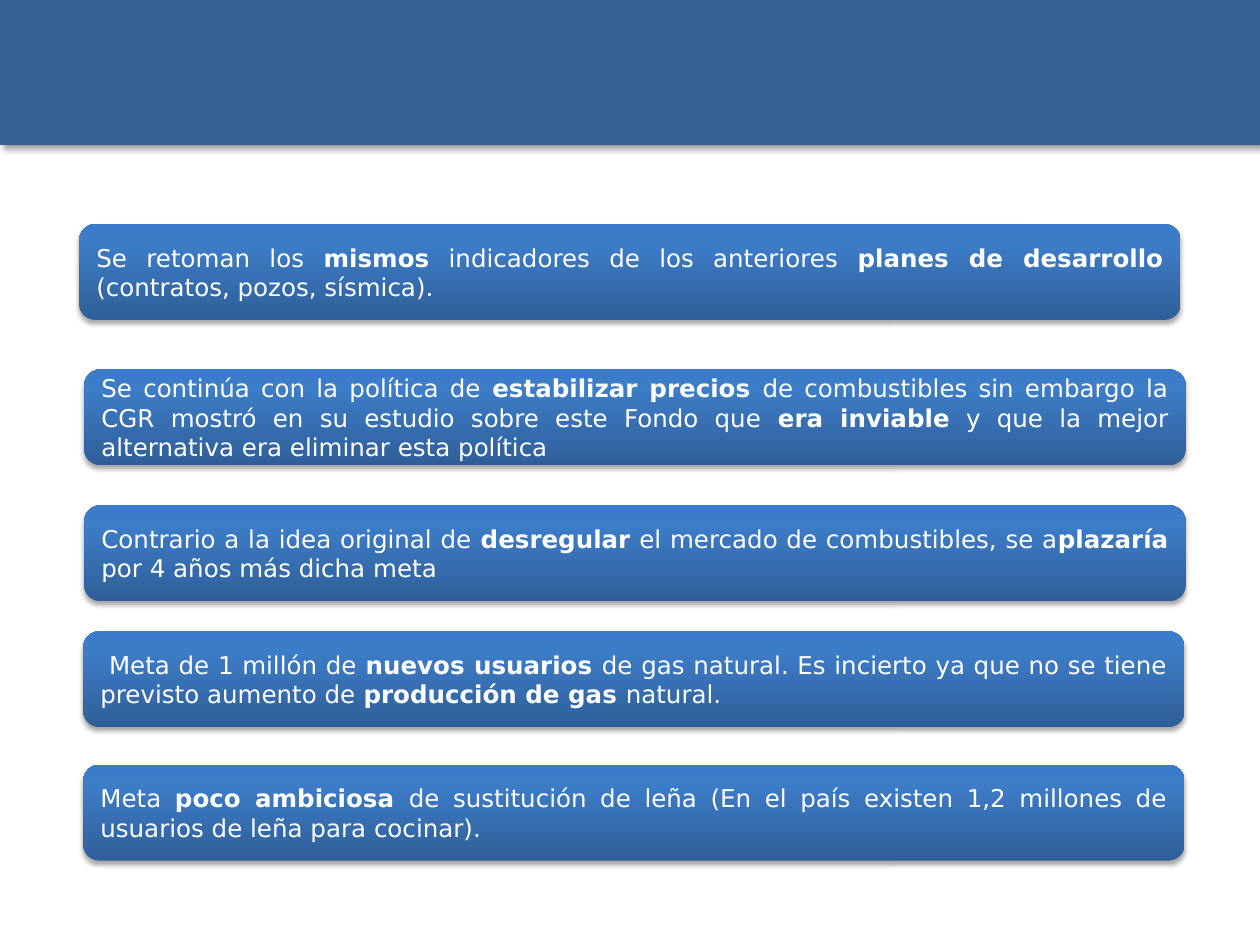
from lxml.etree import SubElement
from pptx import Presentation
from pptx.dml.color import RGBColor
from pptx.enum.shapes import MSO_SHAPE
from pptx.enum.text import MSO_ANCHOR, PP_ALIGN
from pptx.oxml.ns import qn
from pptx.util import Cm, Pt

THEME = {
    "header": "376092",
    "card_stops": [(0, "2F5F99"), (80, "3D7CC7"), (100, "3A7CCB")],
    "header_shadow": {"color": "000000", "opacity": 40, "blur": 4, "distance": 3, "angle": 45},
    "card_shadow": {"color": "000000", "opacity": 35, "blur": 3.1, "distance": 1.8, "angle": 90},
    "font": {"name": "DejaVu Sans", "size": Pt(14)},
    "text": "FFFFFF",
}

SLIDE_WIDTH, SLIDE_HEIGHT = 25.4, 19.05
HEADER_HEIGHT = 2.92
CARD_WIDTH, CARD_HEIGHT = 22.2, 1.93

# left, top (cm), then passages that alternate regular and bold
FINDINGS = [
    (1.6, 4.52, ["Se retoman los ", "mismos", " indicadores de los anteriores ",
                 "planes de desarrollo ", "(contratos, pozos, sísmica)."]),
    (1.7, 7.45, ["Se continúa con la política de ", "estabilizar precios ",
                 "de combustibles sin embargo la CGR mostró en su estudio sobre este Fondo que ",
                 "era inviable", " y que la mejor alternativa era eliminar esta política"]),
    (1.7, 10.19, ["Contrario a la idea original de ", "desregular",
                  " el mercado de combustibles, se a", "plazaría ",
                  "por 4 años más dicha meta"]),
    (1.68, 12.73, [" Meta de 1 millón de ", "nuevos usuarios ",
                   "de gas natural. Es incierto ya que no se tiene previsto aumento de ",
                   "producción de gas ", "natural."]),
    (1.68, 15.42, ["Meta ", "poco ambiciosa ",
                   "de sustitución de leña (En el país existen 1,2 millones de "
                   "usuarios de leña para cocinar)."]),
]


def add_block(slide, preset, left, top, width, height, shadow):
    """Add an outline-free shape, measured in cm, with an outer shadow."""
    block = slide.shapes.add_shape(preset, Cm(left), Cm(top), Cm(width), Cm(height))
    block.line.fill.background()
    block.shadow.inherit = False
    effects = block._element.spPr.find(qn("a:effectLst"))
    outer = SubElement(effects, qn("a:outerShdw"), {
        "blurRad": str(Pt(shadow["blur"])),
        "dist": str(Pt(shadow["distance"])),
        "dir": str(shadow["angle"] * 60000),
        "rotWithShape": "0",
    })
    color = SubElement(outer, qn("a:srgbClr"), val=shadow["color"])
    SubElement(color, qn("a:alpha"), val=str(shadow["opacity"] * 1000))
    return block


def fill_gradient(block, stops):
    """Fill from bottom to top with (percent, colour) stops."""
    block.fill.gradient()
    block.fill.gradient_angle = 90
    stop_list = block._element.spPr.find(".//" + qn("a:gsLst"))
    for default_stop in list(stop_list):
        stop_list.remove(default_stop)
    for percent, color in stops:
        stop = SubElement(stop_list, qn("a:gs"), pos=str(percent * 1000))
        SubElement(stop, qn("a:srgbClr"), val=color)


def add_finding(slide, left, top, passages):
    card = add_block(slide, MSO_SHAPE.ROUNDED_RECTANGLE, left, top,
                     CARD_WIDTH, CARD_HEIGHT, THEME["card_shadow"])
    fill_gradient(card, THEME["card_stops"])
    frame = card.text_frame
    frame.word_wrap = True
    frame.vertical_anchor = MSO_ANCHOR.MIDDLE
    paragraph = frame.paragraphs[0]
    paragraph.alignment = PP_ALIGN.JUSTIFY
    for index, passage in enumerate(passages):
        run = paragraph.add_run()
        run.text = passage
        for attribute, value in {**THEME["font"], "bold": index % 2 == 1}.items():
            setattr(run.font, attribute, value)
        run.font.color.rgb = RGBColor.from_string(THEME["text"])


def main():
    presentation = Presentation()
    presentation.slide_width = Cm(SLIDE_WIDTH)
    presentation.slide_height = Cm(SLIDE_HEIGHT)
    slide = presentation.slides.add_slide(presentation.slide_layouts[6])

    header = add_block(slide, MSO_SHAPE.RECTANGLE, 0, 0, SLIDE_WIDTH, HEADER_HEIGHT,
                       THEME["header_shadow"])
    header.fill.solid()
    header.fill.fore_color.rgb = RGBColor.from_string(THEME["header"])

    for left, top, passages in FINDINGS:
        add_finding(slide, left, top, passages)

    presentation.save("out.pptx")


if __name__ == "__main__":
    main()
